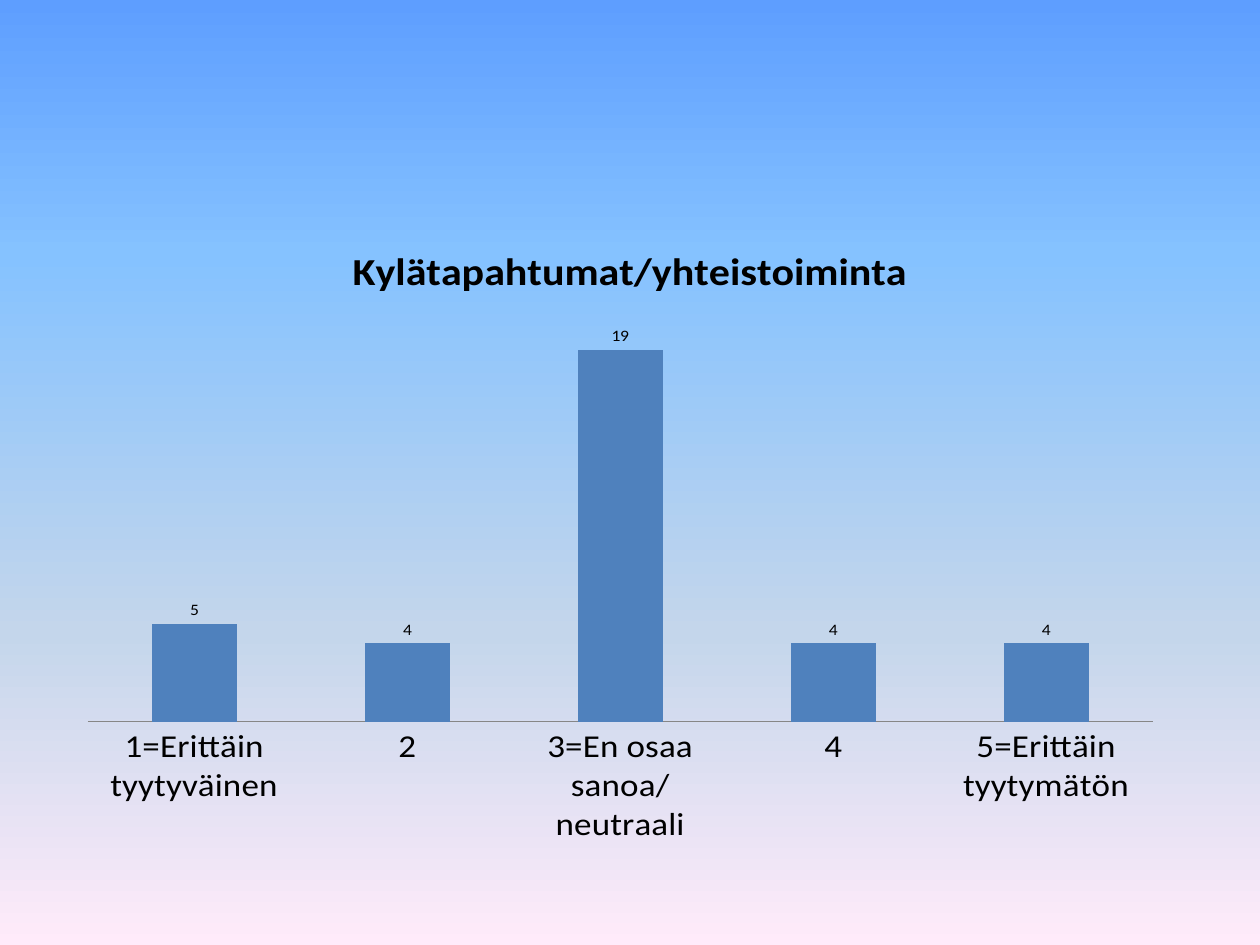
from lxml import etree
from pptx import Presentation, util as u
from pptx.chart.data import CategoryChartData
from pptx.dml.color import RGBColor
from pptx.enum import chart as ch
from pptx.oxml import ns

# Content
TITLE = "Kylätapahtumat/yhteistoiminta"
ANSWERS = [
    ("1=Erittäin tyytyväinen", 5),
    ("2", 4),
    ("3=En osaa sanoa/neutraali", 19),
    ("4", 4),
    ("5=Erittäin tyytymätön", 4),
]

# Format
COLORS = {"bar": "4F81BD", "text": "000000", "axis": "868686"}
SKY = [(0, "5E9EFF"), (27, "85C2FF"), (67, "C4D6EB"), (100, "FFEBFA")]
WIDTH, HEIGHT = 10, 7.5
CHART_SHARES = (0.05, 0.23, 0.9, 0.66)
PLOT_SHARES = {"x": 0.022, "y": 0.194, "w": 0.939, "h": 0.69}
FONTS = {
    "chart": {"name": "Calibri", "size": u.Pt(10)},
    "category": {"name": "Calibri", "size": u.Pt(20)},
    "title": {"name": "Calibri", "size": u.Pt(24), "bold": True},
}


def set_font(font, style):
    for key, value in FONTS[style].items():
        setattr(font, key, value)
    font.color.rgb = RGBColor.from_string(COLORS["text"])


def add_child(parent, tag, **attributes):
    return etree.SubElement(parent, ns.qn(tag), attributes)


def paint_background(slide):
    fill = slide.background.fill
    fill.gradient()
    fill.gradient_angle = 270
    stops = slide.element.find(".//" + ns.qn("a:gsLst"))
    for stop in list(stops):
        stops.remove(stop)
    for percent, color in SKY:
        stop = add_child(stops, "a:gs", pos=str(percent * 1000))
        add_child(stop, "a:srgbClr", val=color)


def place_plot(chart):
    plot_area = chart.element.find(".//" + ns.qn("c:plotArea"))
    layout = plot_area.find(ns.qn("c:layout"))
    if layout is None:
        layout = add_child(plot_area, "c:layout")
        plot_area.insert(0, layout)
    manual = add_child(layout, "c:manualLayout")
    settings = {"layoutTarget": "inner", "xMode": "edge", "yMode": "edge", **PLOT_SHARES}
    for name, value in settings.items():
        add_child(manual, "c:" + name, val=str(value))


presentation = Presentation()
presentation.slide_width, presentation.slide_height = u.Inches(WIDTH), u.Inches(HEIGHT)
slide = presentation.slides.add_slide(presentation.slide_layouts[6])
paint_background(slide)

# Chart and title
data = CategoryChartData()
data.categories = [answer for answer, count in ANSWERS]
data.add_series("Series 1", [count for answer, count in ANSWERS])
box = [u.Inches(round(share * side, 2))
       for share, side in zip(CHART_SHARES, (WIDTH, HEIGHT) * 2)]
box[1] = u.Inches(1.75)
chart = slide.shapes.add_chart(ch.XL_CHART_TYPE.COLUMN_CLUSTERED, *box, data).chart
set_font(chart.font, "chart")
chart.has_legend = False
chart.has_title = True
title = chart.chart_title.text_frame
title.text = TITLE
set_font(title.paragraphs[0].runs[0].font, "title")
place_plot(chart)

# Bars and their values
plot = chart.plots[0]
plot.gap_width, plot.overlap, plot.vary_by_categories = 150, -25, False
bars = plot.series[0].format.fill
bars.solid()
bars.fore_color.rgb = RGBColor.from_string(COLORS["bar"])
plot.has_data_labels = True
labels = plot.data_labels
labels.show_value = True
labels.position = ch.XL_LABEL_POSITION.OUTSIDE_END
set_font(labels.font, "chart")

# Axes
categories, values = chart.category_axis, chart.value_axis
categories.major_tick_mark = ch.XL_TICK_MARK.NONE
set_font(categories.tick_labels.font, "category")
categories.format.line.color.rgb = RGBColor.from_string(COLORS["axis"])
categories.format.line.width = u.Pt(0.75)
values.visible = False
values.has_major_gridlines = False
values.minimum_scale = 0

presentation.save("out.pptx")
